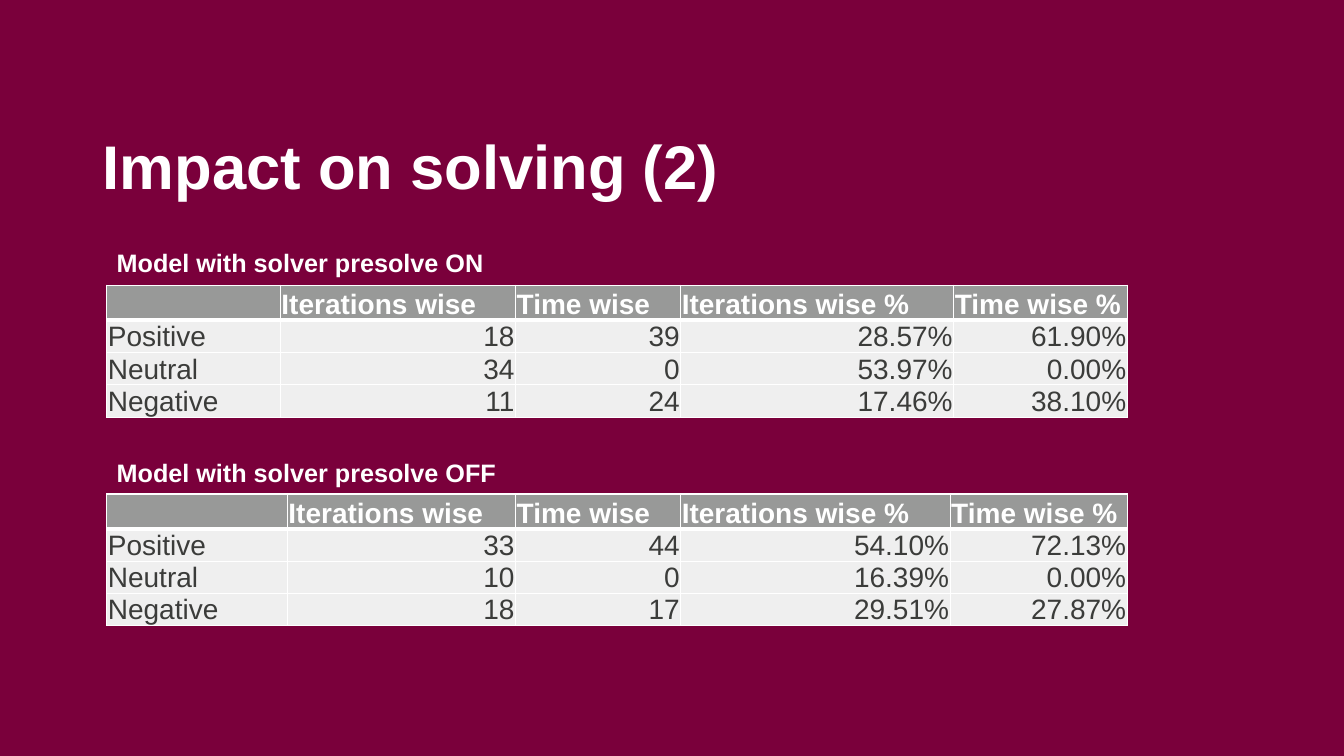
import pptx
import pptx.dml.color
import pptx.enum.text
import pptx.oxml
import pptx.oxml.ns
import pptx.util

Pt = pptx.util.Pt
RGBColor = pptx.dml.color.RGBColor
PP_ALIGN = pptx.enum.text.PP_ALIGN
MSO_ANCHOR = pptx.enum.text.MSO_ANCHOR

# Content
HEADING = "Impact on solving (2)"
COLUMNS = ["", "Iterations wise", "Time wise", "Iterations wise %", "Time wise %"]
RESULTS = [
    {
        "caption": "Model with solver presolve ON",
        "caption_top": 172.8, "caption_width": 283.7, "table_top": 203.8,
        "widths": [124, 168, 118, 195, 124],
        "rows": [
            ["Positive", "18", "39", "28.57%", "61.90%"],
            ["Neutral", "34", "0", "53.97%", "0.00%"],
            ["Negative", "11", "24", "17.46%", "38.10%"],
        ],
    },
    {
        "caption": "Model with solver presolve OFF",
        "caption_top": 323.3, "caption_width": 293, "table_top": 352.8,
        "widths": [129, 163, 118, 192.5, 126.5],
        "rows": [
            ["Positive", "33", "44", "54.10%", "72.13%"],
            ["Neutral", "10", "0", "16.39%", "0.00%"],
            ["Negative", "18", "17", "29.51%", "27.87%"],
        ],
    },
]

# Style
FONT = "Arial"
WINE = RGBColor(0x7A, 0x00, 0x3B)
WHITE = RGBColor(0xFF, 0xFF, 0xFF)
HEADER_GREY = RGBColor(0x98, 0x99, 0x98)
BODY_GREY = RGBColor(0xEF, 0xEF, 0xEF)
INK = RGBColor(0x3B, 0x3C, 0x3A)
LEFT = 76.3
HEADER_HEIGHT, ROW_HEIGHT = 25, 23.1
CAPTION_HEIGHT = 28.8
CELL_INSET = 0.75
THIN, THICK = 1, 3


def style_font(font, size, color, bold):
    font.name = FONT
    font.size = Pt(size)
    font.bold = bold
    font.color.rgb = color


def write(paragraph, text, size, color, bold):
    run = paragraph.add_run()
    run.text = text
    style_font(run.font, size, color, bold)


def set_borders(cell, top, bottom):
    properties = cell._tc.get_or_add_tcPr()
    sides = [("lnL", THIN), ("lnR", THIN), ("lnT", top), ("lnB", bottom)]
    for position, (side, width) in enumerate(sides):
        properties.insert(position, pptx.oxml.parse_xml(
            f'<a:{side} {pptx.oxml.ns.nsdecls("a")} w="{Pt(width)}">'
            f'<a:solidFill><a:srgbClr val="{WHITE}"/></a:solidFill></a:{side}>'))


def fill_cell(cell, text, row, column):
    is_header = row == 0
    cell.margin_left = cell.margin_right = cell.margin_top = Pt(CELL_INSET)
    cell.margin_bottom = Pt(0)
    cell.vertical_anchor = MSO_ANCHOR.BOTTOM
    cell.fill.solid()
    cell.fill.fore_color.rgb = HEADER_GREY if is_header else BODY_GREY
    set_borders(cell, top=THICK if row == 1 else THIN,
                bottom=THICK if is_header else THIN)
    paragraph = cell.text_frame.paragraphs[0]
    paragraph.alignment = PP_ALIGN.LEFT if is_header or column == 0 else PP_ALIGN.RIGHT
    if text:
        write(paragraph, text, 20, WHITE if is_header else INK, is_header)
    else:
        style_font(paragraph.font, 20, WHITE, True)


def add_results_table(slide, result):
    grid = [COLUMNS] + result["rows"]
    heights = [HEADER_HEIGHT] + [ROW_HEIGHT] * len(result["rows"])
    table = slide.shapes.add_table(
        len(grid), len(COLUMNS), Pt(LEFT), Pt(result["table_top"]),
        Pt(sum(result["widths"])), Pt(sum(heights))).table
    table.horz_banding = False
    for column, width in zip(table.columns, result["widths"]):
        column.width = Pt(width)
    for row, (height, texts) in enumerate(zip(heights, grid)):
        table.rows[row].height = Pt(height)
        for column, text in enumerate(texts):
            fill_cell(table.cell(row, column), text, row, column)


def add_caption(slide, result):
    caption = slide.shapes.add_textbox(
        Pt(LEFT), Pt(result["caption_top"]),
        Pt(result["caption_width"]), Pt(CAPTION_HEIGHT)).text_frame
    caption.word_wrap = False
    write(caption.paragraphs[0], result["caption"], 18, WHITE, True)


def main():
    presentation = pptx.Presentation()
    presentation.slide_width, presentation.slide_height = Pt(960), Pt(540)
    slide = presentation.slides.add_slide(presentation.slide_layouts.get_by_name("Title Only"))
    slide.background.fill.solid()
    slide.background.fill.fore_color.rgb = WINE

    # Heading
    heading = slide.shapes.title
    heading.left, heading.top = Pt(66.2), Pt(93.6)
    heading.width, heading.height = Pt(712.8), Pt(88.6)
    heading.text_frame.auto_size = pptx.enum.text.MSO_AUTO_SIZE.NONE
    heading.text_frame.vertical_anchor = MSO_ANCHOR.TOP
    heading_line = heading.text_frame.paragraphs[0]
    heading_line.alignment = PP_ALIGN.LEFT
    heading_line.line_spacing = 0.9
    write(heading_line, HEADING, 44, WHITE, True)

    # Result tables, then their captions
    for result in RESULTS:
        add_results_table(slide, result)
    for result in RESULTS:
        add_caption(slide, result)

    presentation.save("out.pptx")


if __name__ == "__main__":
    main()
